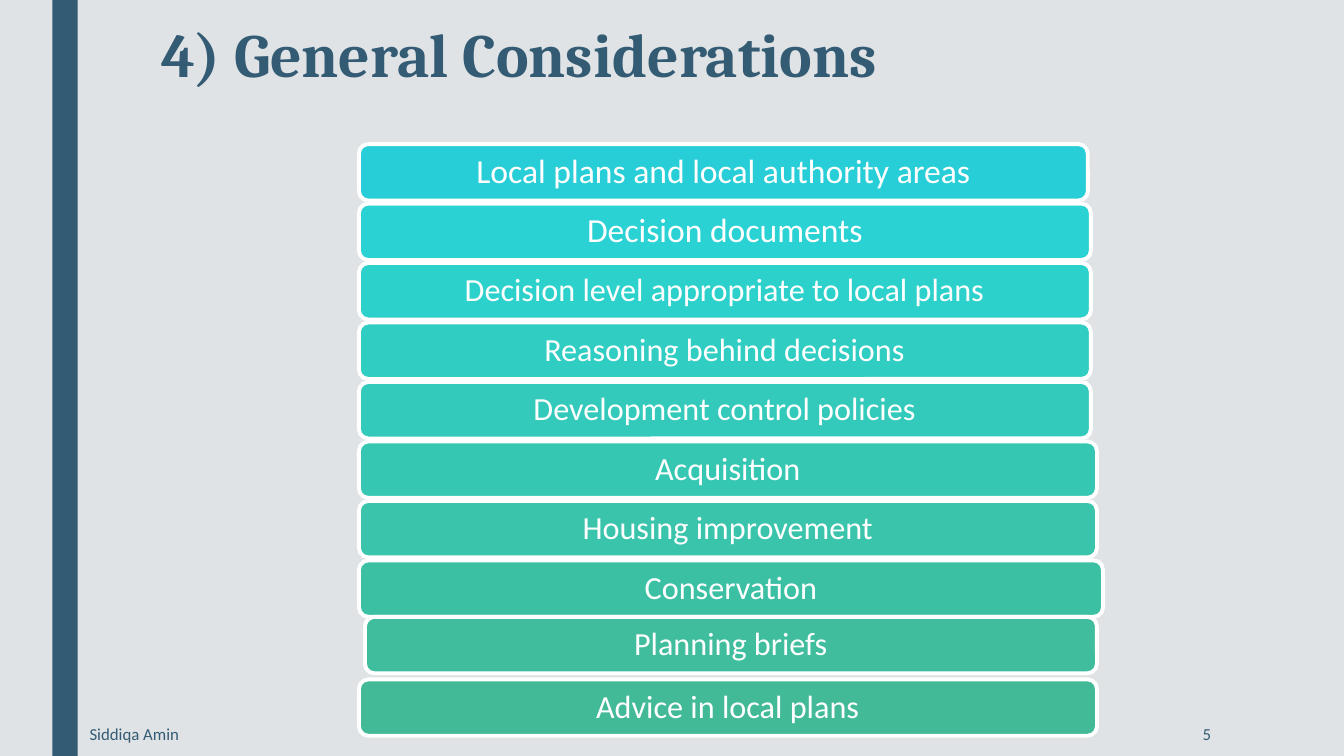
from dataclasses import dataclass

from pptx import Presentation
from pptx.dml.color import RGBColor
from pptx.enum.shapes import MSO_SHAPE
from pptx.enum.text import MSO_ANCHOR, MSO_AUTO_SIZE, PP_ALIGN
from pptx.util import Inches, Pt

COLORS = {"back": "DFE3E5", "navy": "335B74", "white": "FFFFFF"}
FONTS = {
    "title": {"name": "Cambria", "size": Pt(44), "bold": True},
    "large": {"name": "Calibri", "size": Pt(24), "bold": False},
    "bar": {"name": "Calibri", "size": Pt(23), "bold": False},
    "foot": {"name": "Calibri", "size": Pt(12), "bold": False},
}
FRAME = {"word_wrap": True, "auto_size": MSO_AUTO_SIZE.NONE}
TOP, STEP, HEIGHT = 1.43, 0.59, 0.56


@dataclass
class Bar:
    text: str
    fill: str
    width: float = 7.26
    left: float = 3.56
    shift: float = 0
    font: str = "bar"


@dataclass
class Note:
    text: str
    left: float
    width: float
    align: PP_ALIGN


BARS = [
    Bar("Local plans and local authority areas", "27CED7", 7.23, font="large"),
    Bar("Decision documents", "2AD2D4", font="large"),
    Bar("Decision level appropriate to local plans", "2DD1CC"),
    Bar("Reasoning behind decisions", "30CDC3"),
    Bar("Development control policies", "33CABB"),
    Bar("Acquisition", "36C7B3", 7.32),
    Bar("Housing improvement", "39C4AB", 7.32),
    Bar("Conservation", "3CC0A4", 7.38),
    Bar("Planning briefs", "3FBD9D", left=3.62, shift=-0.03),
    Bar("Advice in local plans", "42BA97", 7.32),
]
NOTES = [
    Note("5", 10.36, 1.75, PP_ALIGN.RIGHT),
    Note("Siddiqa Amin", 0.79, 6.87, PP_ALIGN.LEFT),
]


def rgb(value: str) -> RGBColor:
    return RGBColor.from_string(value)


def write(shape, text: str, font: str, color: str, align: PP_ALIGN,
          anchor: MSO_ANCHOR, spacing: float = 1.0) -> None:
    frame = shape.text_frame
    for key, value in {**FRAME, "vertical_anchor": anchor}.items():
        setattr(frame, key, value)
    para = frame.paragraphs[0]
    para.alignment, para.line_spacing = align, spacing
    run = para.add_run()
    run.text = text
    for key, value in FONTS[font].items():
        setattr(run.font, key, value)
    run.font.color.rgb = rgb(COLORS[color])


def block(slide, kind: MSO_SHAPE, box: tuple, fill: str):
    shape = slide.shapes.add_shape(kind, *map(Inches, box))
    shape.shadow.inherit = False
    shape.fill.solid()
    shape.fill.fore_color.rgb = rgb(fill)
    shape.line.fill.background()
    return shape


def draw_bar(slide, bar: Bar, row: int) -> None:
    top = TOP + row * STEP + bar.shift
    box = (bar.left, top, bar.width, HEIGHT)
    shape = block(slide, MSO_SHAPE.ROUNDED_RECTANGLE, box, bar.fill)
    shape.line.color.rgb = rgb(COLORS["white"])
    shape.line.width = Pt(2.75)
    write(shape, bar.text, bar.font, "white", PP_ALIGN.CENTER,
          MSO_ANCHOR.MIDDLE, 0.9)


def draw_note(slide, note: Note) -> None:
    box = (note.left, 7.06, note.width, 0.44)
    shape = slide.shapes.add_textbox(*map(Inches, box))
    write(shape, note.text, "foot", "navy", note.align, MSO_ANCHOR.MIDDLE)


def main() -> None:
    deck = Presentation()
    deck.slide_width, deck.slide_height = Inches(13.33), Inches(7.5)
    slide = deck.slides.add_slide(deck.slide_layouts[5])

    # Background and side stripe
    slide.background.fill.solid()
    slide.background.fill.fore_color.rgb = rgb(COLORS["back"])
    block(slide, MSO_SHAPE.RECTANGLE, (0.52, 0, 0.25, 7.5), COLORS["navy"])

    # Title
    title = slide.shapes.title
    place = {"left": 1.5, "top": 0.2, "width": 10.5, "height": 1.62}
    for key, value in place.items():
        setattr(title, key, Inches(value))
    write(title, "4) General Considerations", "title", "navy",
          PP_ALIGN.LEFT, MSO_ANCHOR.TOP, 0.89)

    # Stack of considerations
    for row, bar in enumerate(BARS):
        draw_bar(slide, bar, row)

    # Page number and author
    for note in NOTES:
        draw_note(slide, note)

    deck.save("out.pptx")


if __name__ == "__main__":
    main()
